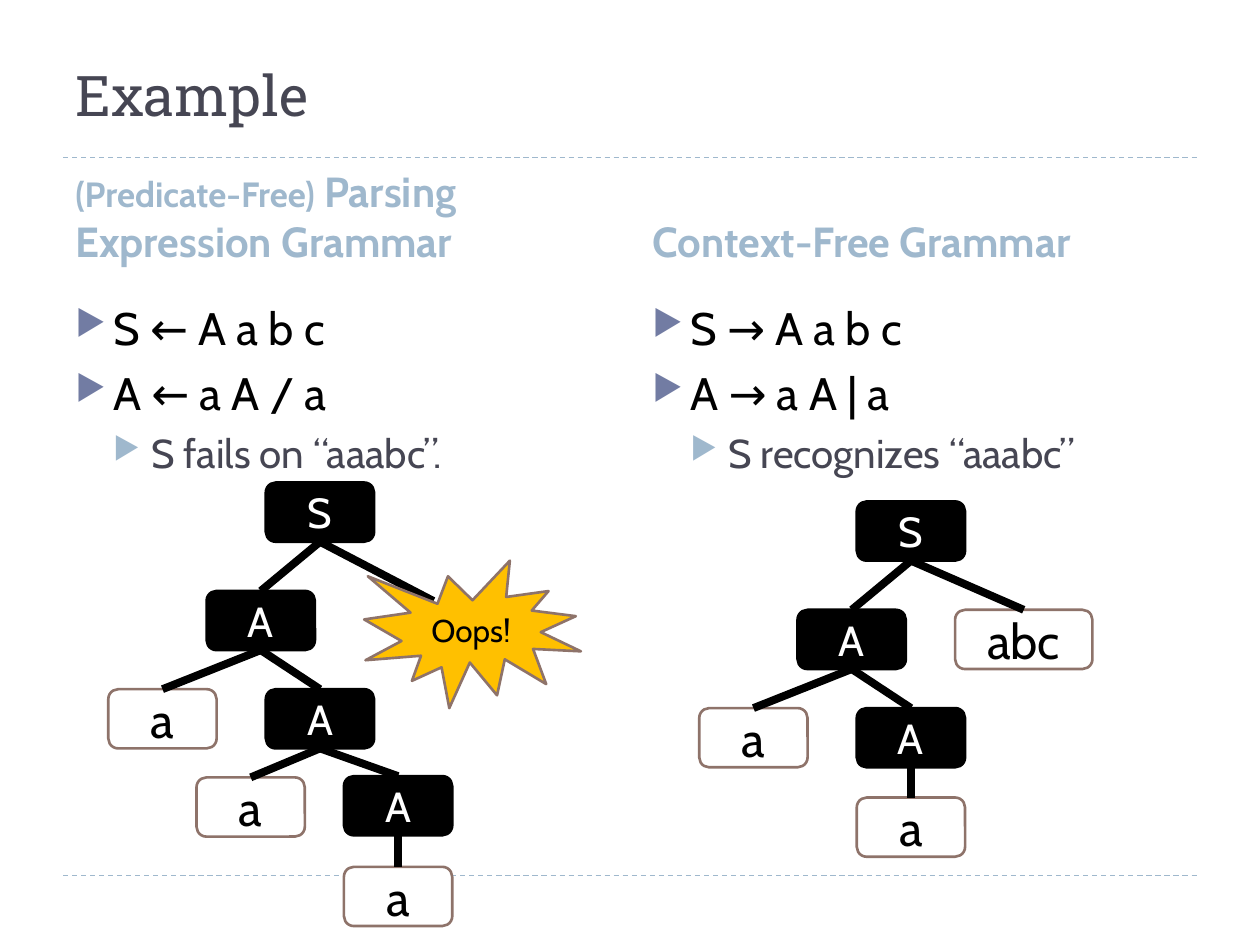
from lxml import etree
from pptx import Presentation
from pptx import util as u
from pptx.dml.color import RGBColor
from pptx.enum import dml, shapes, text
from pptx.oxml import ns

PX = 9144  # EMU per px, 100 px to the inch
BLACK = RGBColor(0x00, 0x00, 0x00)
WHITE = RGBColor(0xFF, 0xFF, 0xFF)
SLATE = RGBColor(0x46, 0x46, 0x53)
SKY = RGBColor(0x9F, 0xB8, 0xCD)
INDIGO = RGBColor(0x72, 0x7C, 0xA3)
BROWN = RGBColor(0x8E, 0x73, 0x6A)
AMBER = RGBColor(0xFF, 0xC0, 0x00)

# Fill, outline and font of each kind of shape
INNER = dict(fill=BLACK, line=BLACK, size=24, color=WHITE)
LEAF = dict(fill=WHITE, line=BROWN, size=28, color=BLACK)
BURST = dict(fill=AMBER, line=BROWN, size=18, color=BLACK)

# Paragraph format of each list level, indents in px
LEVELS = [
    dict(size=26, color=BLACK, bullet=INDIGO, indent=30, before=6),
    dict(size=23, color=SLATE, bullet=SKY, indent=60, before=5),
]

# Tree nodes: label, x, y, width, format, index of parent
STEM = [
    ("S", 125, 0, 86, INNER, None),
    ("A", 78, 86, 86, INNER, 0),
    ("A", 125, 164, 86, INNER, 1),
    ("a", 0, 164, 86, LEAF, 1),
]
PEG_TREE = STEM + [
    ("a", 70, 234, 86, LEAF, 2),
    ("A", 187, 233, 86, INNER, 2),
    ("a", 187, 305, 86, LEAF, 5),
]
CFG_TREE = STEM + [
    ("a", 125, 235, 86, LEAF, 2),
    ("abc", 203, 86, 109, LEAF, 0),
]


def px(*values):
    return [u.Emu(v * PX) for v in values]


def add_run(p, words, size, color, name="Cabin", bold=False):
    r = p.add_run()
    r.text = words
    for key, value in dict(size=u.Pt(size), name=name, bold=bold).items():
        setattr(r.font, key, value)
    r.font.color.rgb = color


def add_text(s, box, anchor):
    tf = s.shapes.add_textbox(*px(*box)).text_frame
    tf.word_wrap = True
    tf.vertical_anchor = anchor
    return tf


def add_line(s, ends, color, width):
    line = s.shapes.add_connector(shapes.MSO_CONNECTOR.STRAIGHT, *px(*ends))
    line.line.color.rgb = color
    line.line.width = u.Pt(width)
    etree.SubElement(line._element.spPr, ns.qn("a:effectLst"))
    return line


def add_shape(s, kind, box, label, fmt):
    sp = s.shapes.add_shape(kind, *px(*box))
    sp.shadow.inherit = False
    sp.fill.solid()
    sp.fill.fore_color.rgb = fmt["fill"]
    sp.line.color.rgb = fmt["line"]
    sp.line.width = u.Pt(1.5)
    tf = sp.text_frame
    tf.word_wrap = True
    tf.vertical_anchor = text.MSO_ANCHOR.MIDDLE
    p = tf.paragraphs[0]
    p.alignment = text.PP_ALIGN.CENTER
    add_run(p, label, fmt["size"], fmt["color"])
    return sp


def add_bullet(p, fmt):
    pPr = p._p.get_or_add_pPr()
    pPr.set("marL", str(fmt["indent"] * PX))
    pPr.set("indent", str(-30 * PX))
    color = etree.SubElement(pPr, ns.qn("a:buClr"))
    etree.SubElement(color, ns.qn("a:srgbClr"), val=str(fmt["bullet"]))
    etree.SubElement(pPr, ns.qn("a:buSzPct"), val="76000")
    etree.SubElement(pPr, ns.qn("a:buChar"), char="▶")


def add_frame(s, box):
    """Title and the two dashed rules."""
    x, y, w, h = box
    for rule_y in (y + 670, y + 100):
        line = add_line(s, (x, rule_y, x + w, rule_y), SKY, 0.75)
        line.line.dash_style = dml.MSO_LINE.DASH
    tf = add_text(s, (x, y, w, 100), text.MSO_ANCHOR.MIDDLE)
    add_run(tf.paragraphs[0], "Example", 32, SLATE, "Roboto Slab")


def add_column(s, box, heading, rules):
    """Heading with a bulleted list below; heading is lines of (words, size)."""
    x, y, w, h = box
    p = add_text(s, (x, y, w, 75), text.MSO_ANCHOR.BOTTOM).paragraphs[0]
    p.space_before = u.Pt(6)
    for i, line in enumerate(heading):
        if i:
            p.add_line_break()
        for words, size in line:
            add_run(p, words, size, SKY, bold=True)

    tf = add_text(s, (x, y + 92, w, h - 92), text.MSO_ANCHOR.TOP)
    for i, (level, words) in enumerate(rules):
        p = tf.add_paragraph() if i else tf.paragraphs[0]
        fmt = LEVELS[level]
        p.level = level
        p.space_before = u.Pt(fmt["before"])
        add_bullet(p, fmt)
        add_run(p, words, fmt["size"], fmt["color"])


def add_tree(s, x, y, tree):
    """Parse tree whose branches join each node to its parent."""
    nodes = [
        add_shape(s, shapes.MSO_SHAPE.ROUNDED_RECTANGLE,
                  (x + dx, y + dy, w, 47), label, fmt)
        for label, dx, dy, w, fmt, _ in tree
    ]
    for node, (*_, parent) in zip(nodes, tree):
        if parent is not None:
            branch = add_line(s, (x, y, x, y), BLACK, 4.5)
            branch.begin_connect(nodes[parent], 2)
            branch.end_connect(node, 0)


def add_failure(s, x, y):
    """Branch from the tree's root that ends in a burst."""
    add_line(s, (x + 168, y + 47, x + 258, y + 94), BLACK, 4.5)
    add_shape(s, shapes.MSO_SHAPE.EXPLOSION1, (x + 203, y + 62, 172, 117),
              "Oops!", BURST)


def main():
    prs = Presentation()
    prs.slide_width, prs.slide_height = px(1000, 750)
    s = prs.slides.add_slide(prs.slide_layouts[6])
    add_frame(s, (50, 25, 900, 700))

    # Left: parsing expression grammar
    add_column(
        s, (50, 141, 442, 534),
        [[("(Predicate-Free)", 20), (" Parsing", 24)],
         [("Expression Grammar", 24)]],
        [(0, "S ← A a b c"), (0, "A ← a A / a"), (1, "S fails on “aaabc”.")])
    add_tree(s, 86, 383, PEG_TREE)
    add_failure(s, 86, 383)

    # Right: context-free grammar
    add_column(
        s, (508, 141, 442, 534),
        [[("Context-Free Grammar", 24)]],
        [(0, "S → A a b c"), (0, "A → a A | a"), (1, "S recognizes “aaabc”")])
    add_tree(s, 555, 398, CFG_TREE)

    prs.save("out.pptx")


if __name__ == "__main__":
    main()
